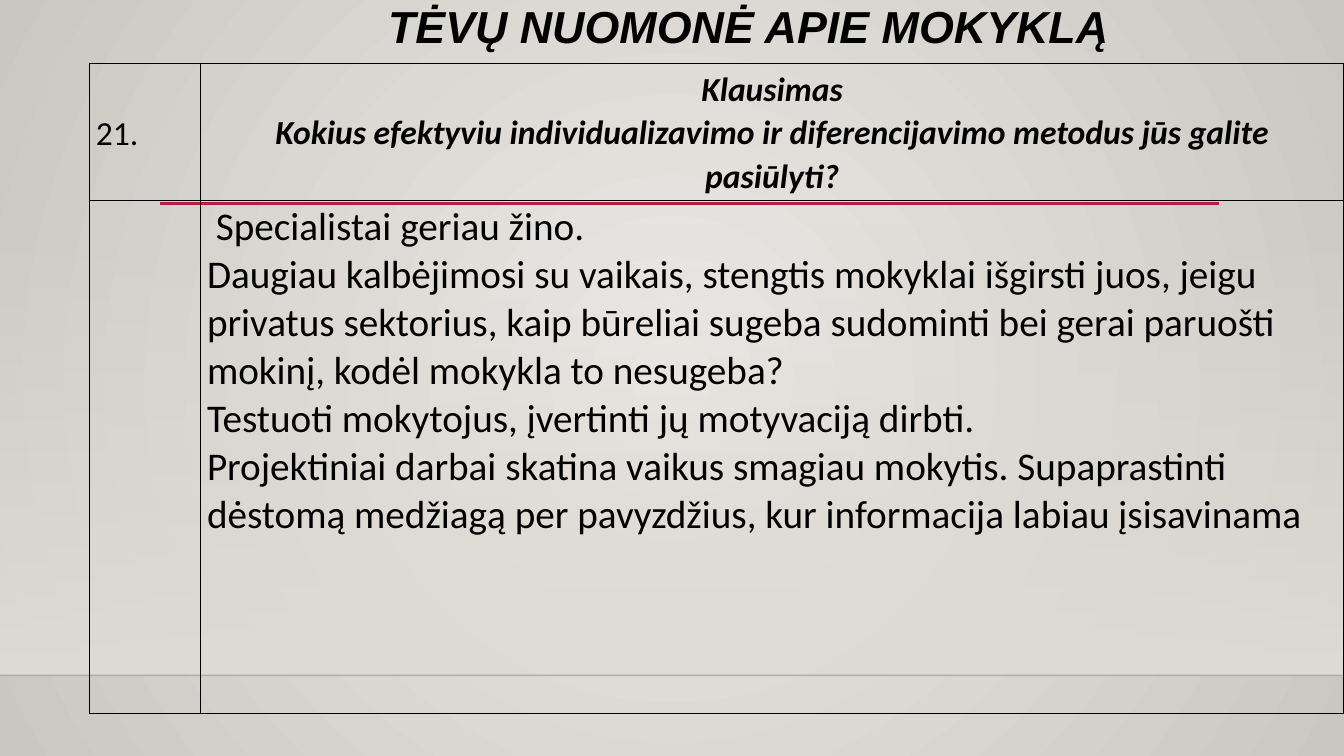
from lxml.etree import SubElement
from pptx import Presentation
from pptx.dml.color import RGBColor
from pptx.enum.shapes import MSO_CONNECTOR, MSO_SHAPE
from pptx.enum.text import MSO_ANCHOR, PP_ALIGN
from pptx.oxml import parse_xml
from pptx.oxml.ns import nsdecls, qn
from pptx.util import Pt

BLACK = RGBColor(0x00, 0x00, 0x00)
RED = RGBColor(0xB7, 0x1E, 0x42)
CENTER_LIGHT = RGBColor(0xEC, 0xEA, 0xE7)
EDGE_DARK = RGBColor(0xCA, 0xC7, 0xC1)
WALL = RGBColor(0xDF, 0xDB, 0xD5)

WIDTH, HEIGHT = 960, 540
FLOOR_TOP = 482.4
RADIAL = ('<a:path path="circle"><a:fillToRect l="50000" t="50000" '
          'r="50000" b="50000"/></a:path>')
DOWNWARD = '<a:lin ang="5400000" scaled="0"/>'

TITLE = "TĖVŲ NUOMONĖ APIE MOKYKLĄ"
QUESTION = [
    "Klausimas",
    "Kokius efektyviu individualizavimo ir diferencijavimo metodus jūs galite pasiūlyti?",
]
ANSWERS = [
    "Specialistai geriau žino.",
    "Daugiau kalbėjimosi su vaikais, stengtis mokyklai išgirsti juos, jeigu privatus "
    "sektorius, kaip būreliai sugeba sudominti bei gerai paruošti mokinį, kodėl "
    "mokykla to nesugeba?",
    "Testuoti mokytojus, įvertinti jų motyvaciją dirbti.",
    "Projektiniai darbai skatina vaikus smagiau mokytis. Supaprastinti dėstomą medžiagą "
    "per pavyzdžius, kur informacija labiau įsisavinama",
]


def apply_gradient(fill, element, stops, direction):
    fill.solid()
    fill.fore_color.rgb = WALL
    solid = element.find(".//" + qn("a:solidFill"))
    stop_list = "".join(
        f'<a:gs pos="{position * 1000}"><a:srgbClr val="{color}">'
        f'<a:alpha val="{alpha * 1000}"/></a:srgbClr></a:gs>'
        for position, color, alpha in stops)
    gradient = parse_xml(
        f'<a:gradFill {nsdecls("a")} rotWithShape="1"><a:gsLst>{stop_list}</a:gsLst>'
        f'{direction}</a:gradFill>')
    solid.getparent().replace(solid, gradient)


def add_wall(slide):
    shape = slide.shapes.add_shape(
        MSO_SHAPE.RECTANGLE, Pt(0), Pt(159), Pt(WIDTH), Pt(FLOOR_TOP - 159))
    shape.shadow.inherit = False
    shape.line.fill.background()
    apply_gradient(shape.fill, shape.element, [(0, WALL, 0), (100, WALL, 100)], DOWNWARD)


def add_rule(slide, left, right, top, color, weight, opacity=100):
    connector = slide.shapes.add_connector(
        MSO_CONNECTOR.STRAIGHT, Pt(left), Pt(top), Pt(right), Pt(top))
    connector.line.color.rgb = color
    connector.line.width = Pt(weight)
    color_element = connector.element.spPr.find(".//" + qn("a:srgbClr"))
    SubElement(color_element, qn("a:alpha")).set("val", str(opacity * 1000))
    SubElement(connector.element.spPr, qn("a:effectLst"))


def format_paragraph(paragraph, font_name, size, emphasis, alignment, spacing):
    paragraph.alignment = alignment
    paragraph.line_spacing = spacing
    for run in paragraph.runs:
        run.font.name = font_name
        run.font.size = Pt(size)
        run.font.bold = run.font.italic = emphasis
        run.font.color.rgb = BLACK


def set_title(slide):
    title = slide.shapes.title
    title.left, title.top, title.width, title.height = Pt(116), Pt(0), Pt(837.4), Pt(70.6)
    frame = title.text_frame
    frame.text = TITLE
    frame.word_wrap = True
    frame.vertical_anchor = MSO_ANCHOR.TOP
    format_paragraph(frame.paragraphs[0], "Arial", 32, True, PP_ALIGN.CENTER, 0.9)


def style_cell(cell):
    properties = cell._tc.get_or_add_tcPr()
    for side in ("lnL", "lnR", "lnT", "lnB"):
        properties.append(parse_xml(
            f'<a:{side} {nsdecls("a")} w="{Pt(1)}"><a:solidFill>'
            f'<a:srgbClr val="{BLACK}"/></a:solidFill></a:{side}>'))
    cell.fill.background()
    cell.margin_left = cell.margin_right = Pt(4.5)
    cell.margin_top = cell.margin_bottom = Pt(2)


def fill_cell(cell, lines, size, emphasis=False, alignment=PP_ALIGN.LEFT, spacing=1.0):
    cell.text_frame.text = "\n".join(lines)
    for paragraph in cell.text_frame.paragraphs:
        format_paragraph(paragraph, "Calibri", size, emphasis, alignment, spacing)


def add_survey_table(slide):
    table = slide.shapes.add_table(2, 2, Pt(64), Pt(45.4), Pt(896), Pt(464)).table
    table.first_row = table.horz_banding = False
    for column, width in zip(table.columns, (79.4, 816.4)):
        column.width = Pt(width)
    for row, height in zip(table.rows, (98, 366)):
        row.height = Pt(height)
    for cell in table.iter_cells():
        style_cell(cell)
    number, question, answers = table.cell(0, 0), table.cell(0, 1), table.cell(1, 1)
    fill_cell(number, ["21."], 24, spacing=1.07)
    number.vertical_anchor = MSO_ANCHOR.MIDDLE
    fill_cell(question, QUESTION, 24, True, PP_ALIGN.CENTER, 1.07)
    fill_cell(answers, ANSWERS, 28)
    first_answer = answers.text_frame.paragraphs[0]
    first_answer._p.get_or_add_pPr().set("indent", str(Pt(6.3)))


def main():
    presentation = Presentation()
    presentation.slide_width, presentation.slide_height = Pt(WIDTH), Pt(HEIGHT)
    slide = presentation.slides.add_slide(presentation.slide_layouts[5])
    apply_gradient(slide.background.fill, slide.element,
                   [(0, CENTER_LIGHT, 100), (100, EDGE_DARK, 100)], RADIAL)
    add_wall(slide)
    add_rule(slide, 0, WIDTH, FLOOR_TOP, BLACK, 1, opacity=20)
    add_rule(slide, 114.5, 871, 145.4, RED, 2.5)
    set_title(slide)
    add_survey_table(slide)
    presentation.save("out.pptx")


if __name__ == "__main__":
    main()
